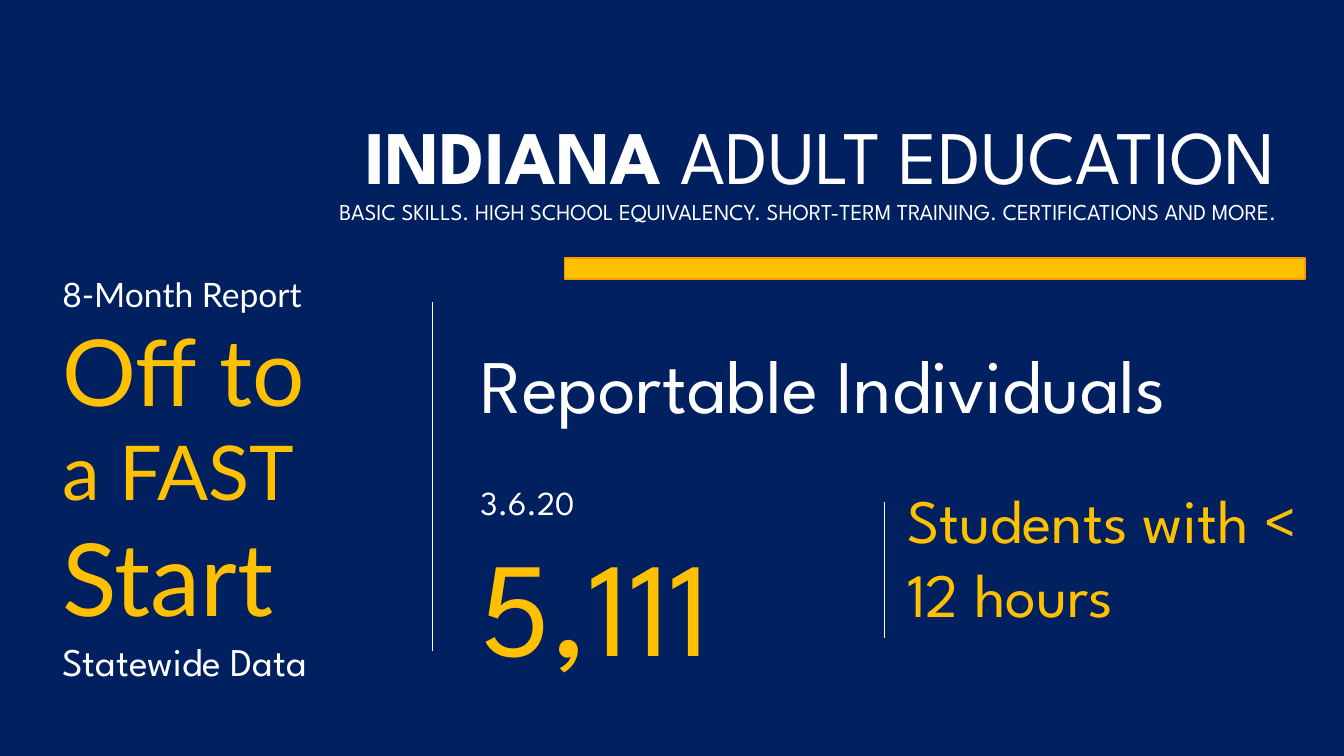
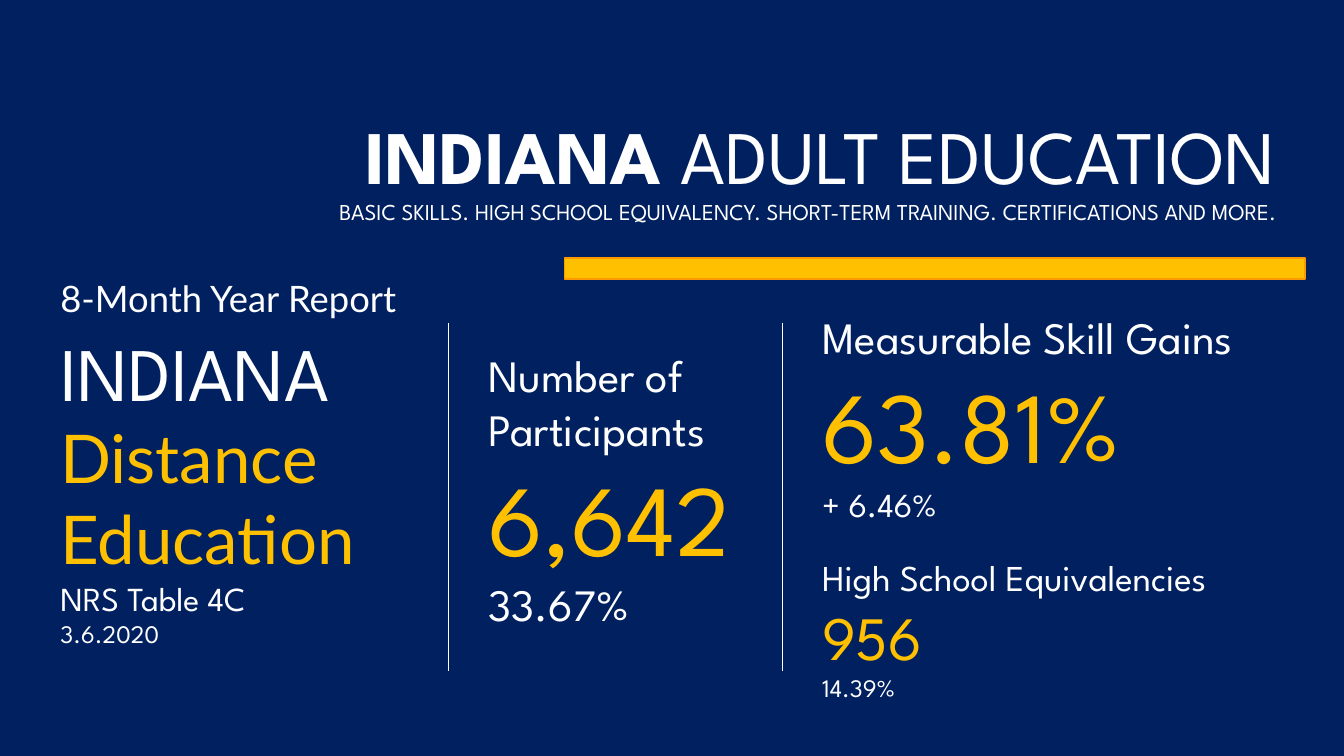
from lxml import etree
from pptx import Presentation
from pptx.dml.color import RGBColor
from pptx.enum import shapes, text
from pptx.oxml.ns import qn
from pptx.util import Cm, Pt

C = {"navy": "002060", "white": "FFFFFF", "gold": "FFC000", "orange": "FF9900"}
C = {name: RGBColor.from_string(value) for name, value in C.items()}
SPARTAN, LATO = "League Spartan", "Lato"


def add_text(s, box, paras):
    tf = s.shapes.add_textbox(*map(Cm, box)).text_frame
    tf.word_wrap = True
    for i, (line, size, font, color) in enumerate(paras):
        p = tf.add_paragraph() if i else tf.paragraphs[0]
        p.add_run().text = line
        p.font.size, p.font.name = Pt(size), font
        p.font.color.rgb = C[color]
    return tf


def add_rule(s, x, top, bottom):
    ln = s.shapes.add_connector(shapes.MSO_CONNECTOR.STRAIGHT, Cm(x), Cm(top), Cm(x), Cm(bottom))
    ln.line.color.rgb = C["white"]
    ln.line.width = Pt(0.75)
    etree.SubElement(ln._element.spPr, qn("a:effectLst"))


prs = Presentation()
prs.slide_width, prs.slide_height = Cm(33.87), Cm(19.05)
bg = prs.slide_master.background.fill
bg.solid()
bg.fore_color.rgb = C["navy"]

for _ in range(2):
    s = prs.slides.add_slide(prs.slide_layouts[5])
    title = s.shapes.title
    title.left, title.top, title.width, title.height = map(Cm, (4.5, 2.54, 27.91, 3.58))
    tf = title.text_frame
    tf.auto_size = text.MSO_AUTO_SIZE.NONE
    tf.vertical_anchor = text.MSO_ANCHOR.MIDDLE
    p = tf.paragraphs[0]
    p.alignment, p.line_spacing = text.PP_ALIGN.RIGHT, 0.9
    p.font.name = SPARTAN
    p.font.color.rgb = C["white"]
    for i, (line, size, bold) in enumerate([
        ("INDIANA", 54, True),
        (" ADULT EDUCATION", 54, False),
        ("BASIC SKILLS. HIGH SCHOOL EQUIVALENCY. SHORT-TERM TRAINING. "
         "CERTIFICATIONS AND MORE.", 16.2, False),
    ]):
        if i == 2:
            p.add_line_break()
        r = p.add_run()
        r.text = line
        r.font.size, r.font.bold = Pt(size), bold

    bar = s.shapes.add_shape(shapes.MSO_SHAPE.RECTANGLE, *map(Cm, (14.22, 6.5, 18.67, 0.53)))
    bar.shadow.inherit = False
    bar.fill.solid()
    bar.fill.fore_color.rgb = C["gold"]
    bar.line.color.rgb = C["orange"]
    bar.line.width = Pt(1)

report, distance = prs.slides

tf = add_text(report, (1.32, 6.78, 8.79, 10.7), [
    ("8-Month Report", 24, LATO, "white"),
    ("Off to", 66, LATO, "gold"),
    ("a FAST ", 54, LATO, "gold"),
    ("Statewide Data", 28, SPARTAN, "white"),
])
r = tf.paragraphs[2].add_run()
r.text = "Start"
r.font.size = Pt(72)
add_text(report, (11.86, 8.38, 20.8, 2.57), [("Reportable Individuals", 54, SPARTAN, "white")])
add_text(report, (11.86, 12.01, 10.08, 6.93), [
    ("3.6.20", 24, SPARTAN, "white"),
    ("5,111", 96, SPARTAN, "gold"),
])
add_text(report, (22.61, 12.01, 11.25, 4.01), [("Students with < 12 hours", 44, SPARTAN, "gold")])
add_rule(report, 22.28, 12.65, 16.08)
add_rule(report, 10.9, 7.62, 16.41)

add_text(distance, (1.27, 6.83, 10.87, 1.37), [("8-Month Year Report", 26, LATO, "white")])
add_text(distance, (1.27, 8.08, 12.65, 8.46), [
    ("INDIANA", 54, SPARTAN, "white"),
    ("Distance Education", 48, LATO, "gold"),
    ("NRS Table 4C", 24, SPARTAN, "white"),
    ("3.6.2020", 18, SPARTAN, "white"),
])
add_text(distance, (12.06, 8.64, 7.67, 7.44), [
    ("Number of Participants", 32, SPARTAN, "white"),
    ("6,642", 72, SPARTAN, "gold"),
    ("33.67%", 32, SPARTAN, "white"),
])
tf = add_text(distance, (20.47, 7.67, 12.83, 10.26), [
    ("Measurable Skill Gains", 32, SPARTAN, "white"),
    ("63.81%", 72, SPARTAN, "gold"),
    ("+ 6.46%", 24, SPARTAN, "white"),
    ("High School Equivalencies", 26, SPARTAN, "white"),
    ("956", 44, SPARTAN, "gold"),
    ("14.39%", 18, SPARTAN, "white"),
])
tf.paragraphs[3].space_before = Pt(22)
for x in (11.3, 19.71):
    add_rule(distance, x, 8.13, 16.92)

prs.save("out.pptx")
